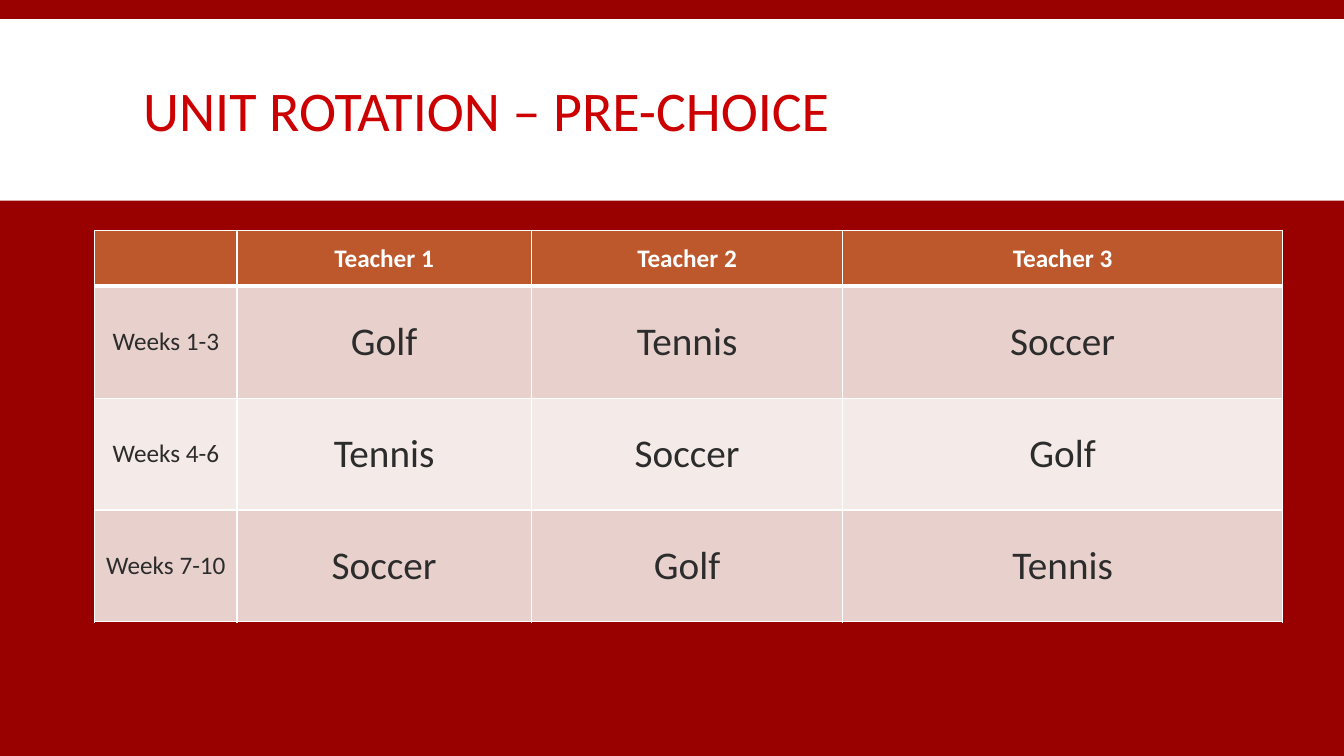
"""Build the unit rotation slide: a title band above a table of teachers by weeks."""
from lxml import etree
from pptx import Presentation
from pptx import util as u
from pptx.dml.color import RGBColor
from pptx.enum import shapes, text
from pptx.oxml import ns


def paint(item, tint):
    if hasattr(item, "solid"):
        item.solid()
        item = item.fore_color
    item.rgb = RGBColor.from_string(tint)


def edge(cell, sides):
    props = cell._tc.get_or_add_tcPr()
    for spot, (side, width) in enumerate(sides.items()):
        line = etree.Element(ns.qn("a:ln" + side), w=str(u.Pt(width)))
        fill = etree.SubElement(line, ns.qn("a:solidFill"))
        etree.SubElement(fill, ns.qn("a:srgbClr"), val="FFFFFF")
        props.insert(spot, line)


deck = Presentation()
deck.slide_width, deck.slide_height = u.Inches(13.33), u.Inches(7.5)
slide = deck.slides.add_slide(deck.slide_layouts[5])
paint(slide.background.fill, "990000")

band = slide.shapes.add_shape(
    shapes.MSO_SHAPE.RECTANGLE, 0, u.Inches(0.19), deck.slide_width, u.Inches(1.8))
band.shadow.inherit = False
paint(band.fill, "FFFFFF")
band.line.fill.background()
slide.shapes._spTree.insert(2, band._element)

title = slide.shapes.title
title.left, title.top = u.Inches(1.32), u.Inches(0.31)
title.width, title.height = u.Inches(10.7), u.Inches(1.65)
frame = title.text_frame
frame.text = "UNIT ROTATION – PRE-CHOICE"
frame.vertical_anchor = text.MSO_ANCHOR.MIDDLE
head = frame.paragraphs[0]
head.alignment = text.PP_ALIGN.LEFT
head.line_spacing = 0.85
head.font.name, head.font.size = "Calibri", u.Pt(40)
paint(head.font.color, "CC0000")

rows = [
    ["", "Teacher 1", "Teacher 2", "Teacher 3"],
    ["Weeks 1-3", "Golf", "Tennis", "Soccer"],
    ["Weeks 4-6", "Tennis", "Soccer", "Golf"],
    ["Weeks 7-10", "Soccer", "Golf", "Tennis"],
]
wide = [1.41, 2.92, 3.09, 4.36]
tall = [0.55] + [1.11] * 3
fills = ["BD582C", "E8D1CD", "F4EAE8", "E8D1CD"]
table = slide.shapes.add_table(
    len(rows), len(wide), u.Inches(0.94), u.Inches(2.29),
    u.Inches(sum(wide)), u.Inches(sum(tall))).table
for col, width in zip(table.columns, wide):
    col.width = u.Inches(width)
for r, row in enumerate(rows):
    table.rows[r].height = u.Inches(tall[r])
    for c, word in enumerate(row):
        cell = table.cell(r, c)
        cell.text = word
        cell.vertical_anchor = text.MSO_ANCHOR.MIDDLE
        paint(cell.fill, fills[r])
        edge(cell, {"L": 1, "R": 1, "T": 3 if r == 1 else 1, "B": 3 if r == 0 else 1})
        para = cell.text_frame.paragraphs[0]
        para.alignment = text.PP_ALIGN.CENTER
        para.font.name = "Calibri"
        para.font.size = u.Pt(28 if r and c else 18)
        para.font.bold = r == 0
        paint(para.font.color, "2C2C2C" if r else "FFFFFF")

deck.save("out.pptx")
